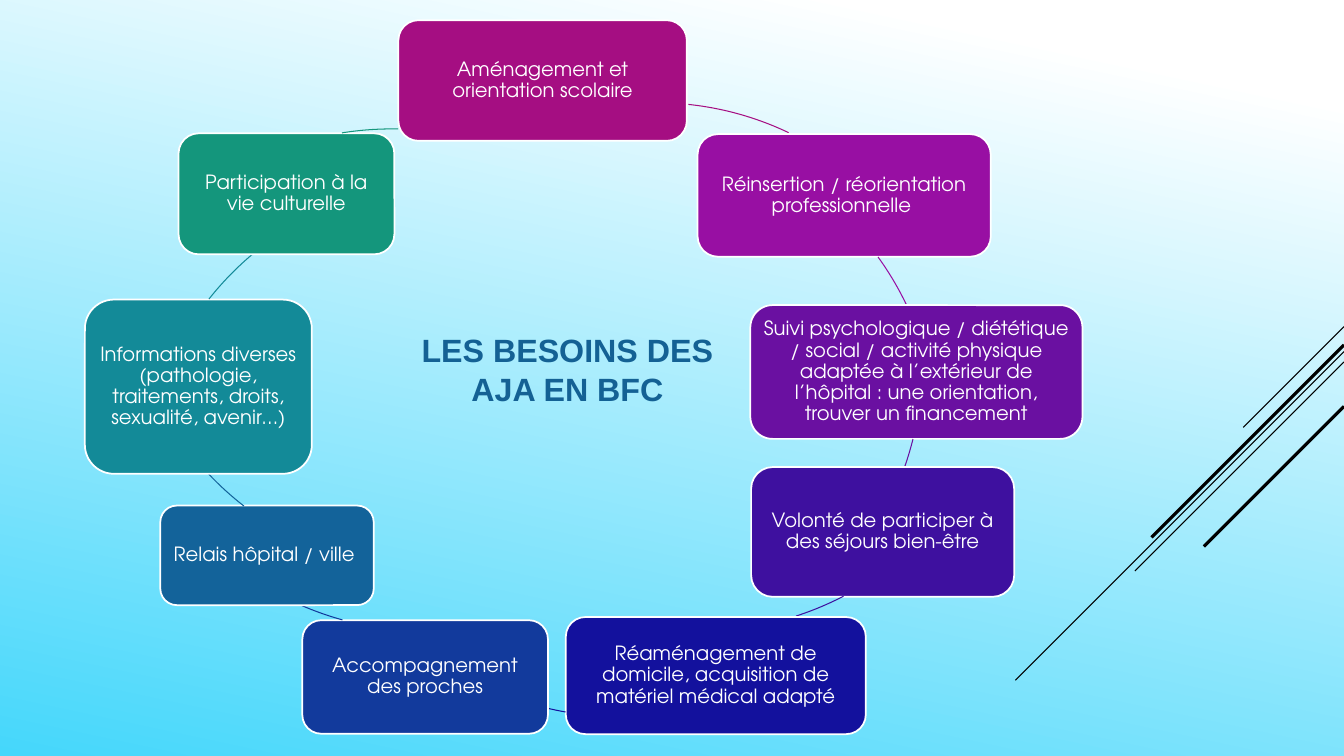
from dataclasses import dataclass
from math import cos, radians, sin, tan

from lxml.etree import SubElement
from pptx import Presentation
from pptx.dml.color import RGBColor
from pptx.enum.shapes import MSO_CONNECTOR as Connector, MSO_SHAPE as Preset
from pptx.enum.text import MSO_ANCHOR as Anchor, PP_ALIGN as Align
from pptx.oxml.ns import qn
from pptx.slide import Slide
from pptx.util import Cm, Pt

WHITE = RGBColor(0xFF, 0xFF, 0xFF)
BLACK = RGBColor(0x00, 0x00, 0x00)
SKY = RGBColor(0x45, 0xD7, 0xFB)
TITLE_BLUE = RGBColor(0x14, 0x61, 0x94)
MAGENTA = RGBColor(0xA5, 0x0E, 0x82)
PURPLE = RGBColor(0x98, 0x0F, 0xA3)
VIOLET = RGBColor(0x6A, 0x10, 0xA1)
INDIGO = RGBColor(0x3E, 0x10, 0x9F)
NAVY = RGBColor(0x13, 0x11, 0x9D)
ROYAL = RGBColor(0x12, 0x3A, 0x9C)
STEEL = RGBColor(0x13, 0x63, 0x9A)
TEAL = RGBColor(0x13, 0x8A, 0x98)
GREEN = RGBColor(0x14, 0x96, 0x7C)

SLIDE_WIDTH = 33.87
ARC_RADIUS = 7.75


@dataclass(frozen=True)
class Arc:
    center_x: float
    center_y: float
    start: float
    end: float


@dataclass(frozen=True)
class Need:
    text: str
    left: float
    top: float
    width: float
    height: float
    color: RGBColor
    arc: Arc


@dataclass(frozen=True)
class Streak:
    top: float
    reach: float
    weight: float


NEEDS = [
    Need("Aménagement et orientation scolaire", 10.04, 0.51, 7.27, 3.04,
         MAGENTA, Arc(16.54, 10.34, -84, -64.5)),
    Need("Réinsertion / réorientation professionnelle ", 17.58, 3.38, 7.39, 3.09,
         PURPLE, Arc(15.85, 11.02, -35.9, -25.6)),
    Need("Suivi psychologique / diététique / social / activité physique adaptée "
         "à l’extérieur de l’hôpital : une orientation, trouver un financement",
         18.91, 7.69, 8.37, 3.37, VIOLET, Arc(15.49, 9.19, 14, 19.3)),
    Need("Volonté de participer à des séjours bien-être", 18.93, 11.77, 6.63, 3.27,
         INDIGO, Arc(17.68, 8.15, 62.5, 72.1)),
    Need("Réaménagement de domicile, acquisition de matériel médical adapté",
         14.26, 15.55, 7.56, 2.95, NAVY, Arc(15.6, 10.31, 100, 103.3)),
    Need("Accompagnement des proches", 7.62, 15.63, 6.19, 2.86,
         ROYAL, Arc(10.69, 8.15, 105.4, 113.5)),
    Need("Relais hôpital / ville ", 4.04, 12.74, 5.38, 2.51,
         STEEL, Arc(10.9, 6.63, 127.8, 136.7)),
    Need("Informations diverses (pathologie, traitements, droits, sexualité, avenir…)",
         2.14, 7.55, 5.72, 4.39, TEAL, Arc(11.35, 12.34, 218.3, 229.9)),
    Need("Participation à la vie culturelle", 4.5, 3.36, 5.44, 3.05,
         GREEN, Arc(9.86, 11, 260.8, 271.3)),
]

STREAKS = [
    Streak(8.23, 2.54, 0.75),
    Streak(8.86, 8.28, 0.75),
    Streak(9.12, 5.27, 0.75),
    Streak(8.69, 4.85, 2.25),
    Streak(10.24, 3.53, 2.25),
]


def paint_background(slide: Slide) -> None:
    fill = slide.background.fill
    fill.gradient()
    fill.gradient_angle = 258
    for stop, position, color in zip(fill.gradient_stops, (0.1, 1), (WHITE, SKY)):
        stop.position = position
        stop.color.rgb = color


def draw_streak(slide: Slide, streak: Streak) -> None:
    line = slide.shapes.add_connector(
        Connector.STRAIGHT, Cm(SLIDE_WIDTH), Cm(streak.top),
        Cm(SLIDE_WIDTH - streak.reach), Cm(streak.top + streak.reach))
    line.line.color.rgb = BLACK
    line.line.width = Pt(streak.weight)
    SubElement(line._element.spPr, qn("a:effectLst"))


def write_title(slide: Slide) -> None:
    title = slide.shapes.title
    title.left, title.top, title.width, title.height = Cm(9.86), Cm(7.47), Cm(8.89), Cm(3.66)
    frame = title.text_frame
    frame.word_wrap = True
    frame.vertical_anchor = Anchor.MIDDLE
    paragraph = frame.paragraphs[0]
    paragraph.alignment = Align.CENTER
    run = paragraph.add_run()
    run.text = "LES BESOINS DES AJA EN BFC"
    run.font.name = "Arial"
    run.font.size = Pt(23)
    run.font.bold = True
    run.font.color.rgb = TITLE_BLUE


def draw_box(slide: Slide, need: Need) -> None:
    box = slide.shapes.add_shape(Preset.ROUNDED_RECTANGLE, Cm(need.left), Cm(need.top),
                                 Cm(need.width), Cm(need.height))
    box.shadow.inherit = False
    box.fill.solid()
    box.fill.fore_color.rgb = need.color
    box.line.color.rgb = WHITE
    box.line.width = Pt(1.25)
    frame = box.text_frame
    frame.word_wrap = True
    frame.vertical_anchor = Anchor.MIDDLE
    frame.margin_left = frame.margin_right = Cm(0.15)
    frame.margin_top = frame.margin_bottom = Cm(0.15)
    paragraph = frame.paragraphs[0]
    paragraph.alignment = Align.CENTER
    paragraph.line_spacing = 0.9
    run = paragraph.add_run()
    run.text = need.text
    run.font.name = "TeX Gyre Adventor"
    run.font.size = Pt(14)
    run.font.color.rgb = WHITE


def bezier_points(arc: Arc) -> list[tuple[float, float]]:
    start, end = radians(arc.start), radians(arc.end)
    pull = 4 / 3 * tan((end - start) / 4)
    unit_points = [
        (cos(start), sin(start)),
        (cos(start) - pull * sin(start), sin(start) + pull * cos(start)),
        (cos(end) + pull * sin(end), sin(end) - pull * cos(end)),
        (cos(end), sin(end)),
    ]
    return [(ARC_RADIUS * (1 + x), ARC_RADIUS * (1 + y)) for x, y in unit_points]


def draw_arc(slide: Slide, arc: Arc, color: RGBColor) -> None:
    left, top = arc.center_x - ARC_RADIUS, arc.center_y - ARC_RADIUS
    builder = slide.shapes.build_freeform(Cm(left), Cm(top))
    builder.add_line_segments([(Cm(left + 2 * ARC_RADIUS), Cm(top + 2 * ARC_RADIUS))],
                              close=False)
    curve = builder.convert_to_shape()
    outline = next(curve._element.iter(qn("a:path")))
    for segment in list(outline):
        outline.remove(segment)
    first, *others = bezier_points(arc)
    for tag, points in (("a:moveTo", [first]), ("a:cubicBezTo", others)):
        segment = SubElement(outline, qn(tag))
        for x, y in points:
            SubElement(segment, qn("a:pt"), x=str(int(Cm(x))), y=str(int(Cm(y))))
    curve.shadow.inherit = False
    curve.fill.background()
    curve.line.color.rgb = color
    curve.line.width = Pt(0.75)


def main() -> None:
    deck = Presentation()
    deck.slide_width = Cm(SLIDE_WIDTH)
    deck.slide_height = Cm(19.05)
    slide = deck.slides.add_slide(deck.slide_layouts[5])
    paint_background(slide)
    for streak in STREAKS:
        draw_streak(slide, streak)
    write_title(slide)
    for need in NEEDS:
        draw_box(slide, need)
        draw_arc(slide, need.arc, need.color)
    deck.save("out.pptx")


if __name__ == "__main__":
    main()
